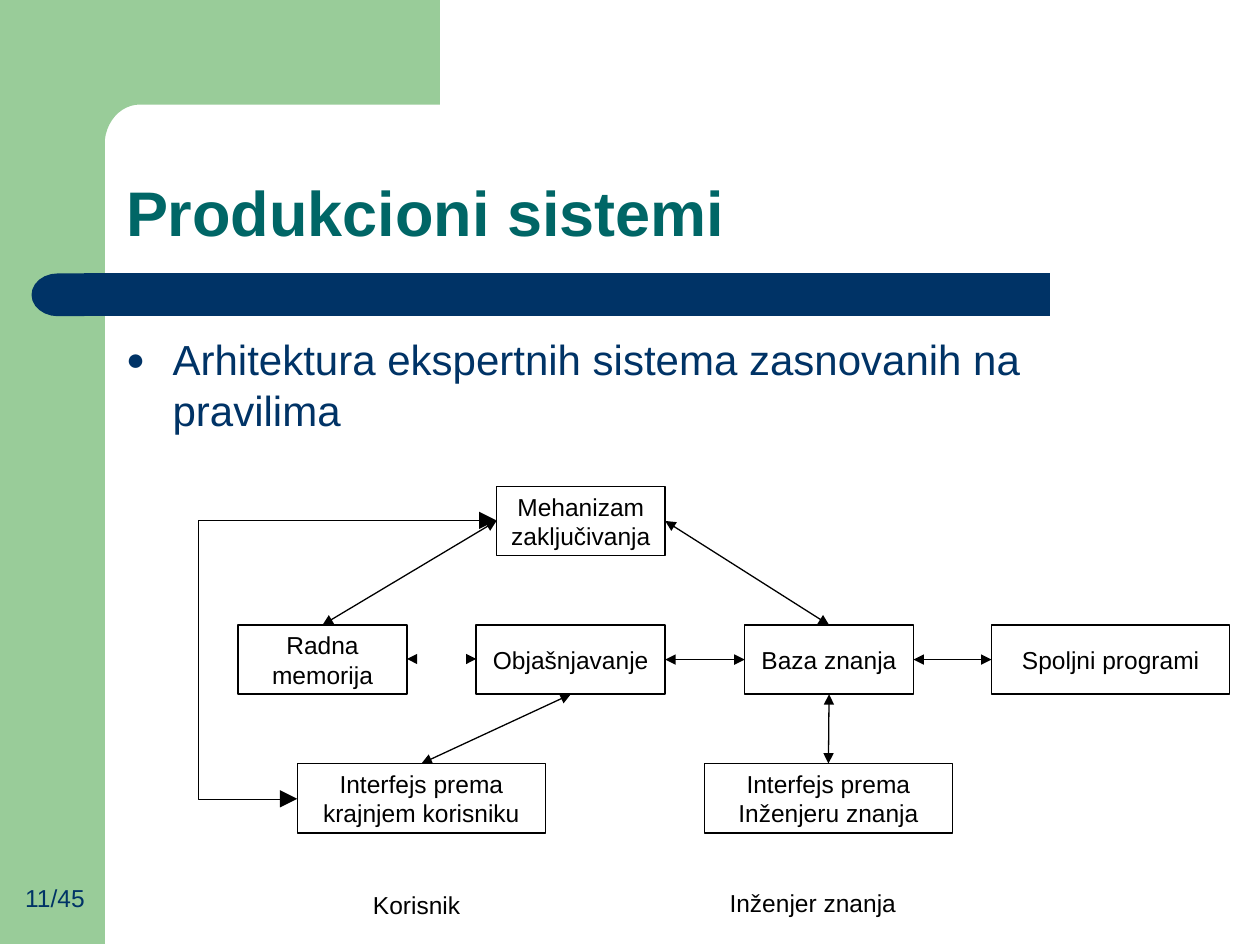
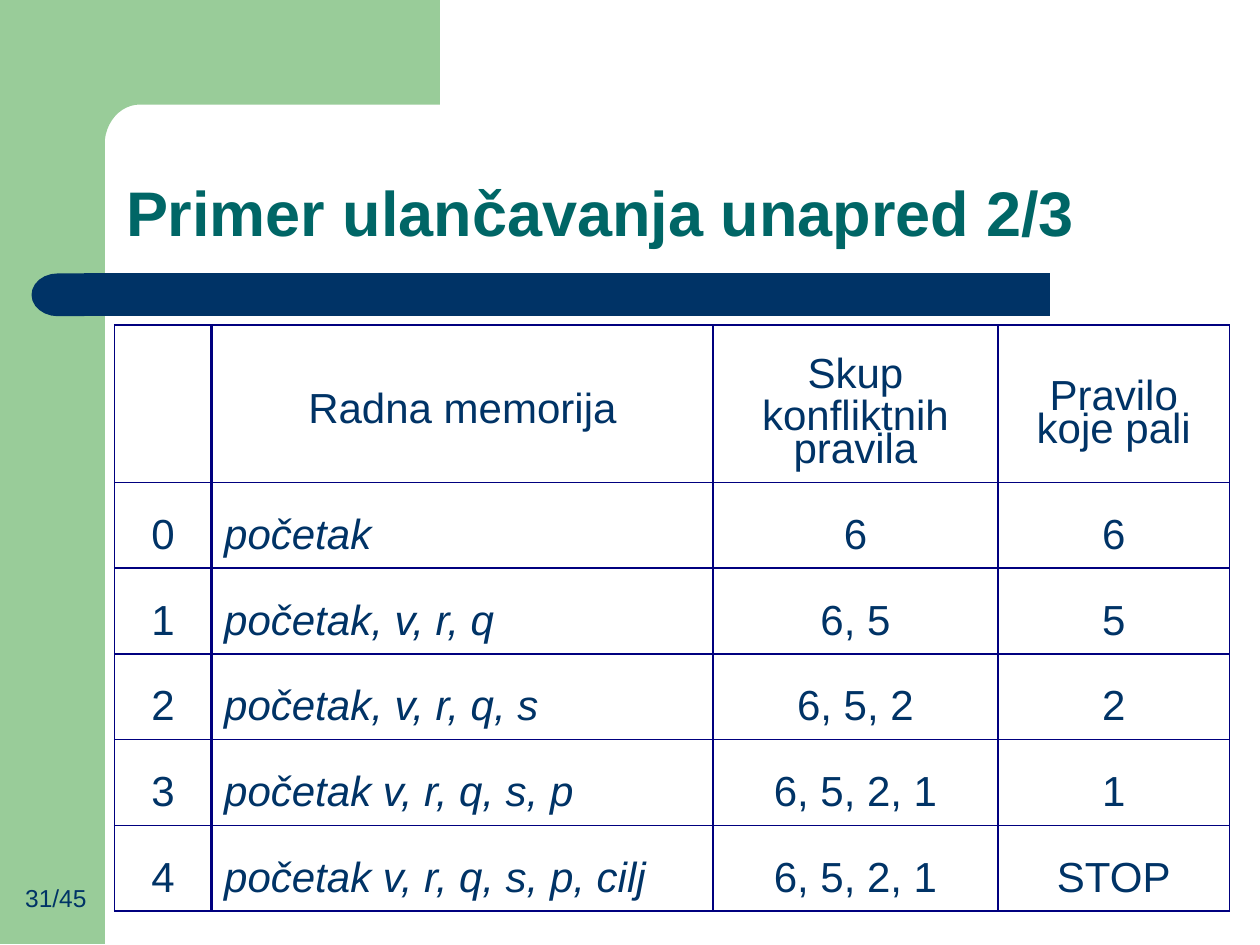
from math import cos, radians, sin

from lxml.etree import SubElement
from pptx import Presentation
from pptx.dml.color import RGBColor as Rgb
from pptx.enum.shapes import MSO_CONNECTOR as Connector, MSO_SHAPE as Shape
from pptx.enum.text import MSO_ANCHOR as Anchor, MSO_AUTO_SIZE as AutoSize, PP_ALIGN as Align
from pptx.oxml.ns import qn
from pptx.util import Inches, Pt

COLORS = {
    "green": "99CC99",
    "navy": "003366",
    "teal": "006666",
    "black": "000000",
    "border": "00007F",
}
TITLE_FONT = {"name": "Arial", "size": Pt(36), "bold": True}
BODY_FONT = {"name": "Arial", "size": Pt(24)}
SMALL_FONT = {"name": "Arial", "size": Pt(14)}
TOP, LEFT, BOTTOM, RIGHT = range(4)

BOX_HEIGHT = 0.55
DIAGRAM_BOXES = {
    "engine": ("Mehanizam\vzaključivanja", 3.94, 3.86, 1.34),
    "memory": ("Radna\vmemorija", 1.89, 4.96, 1.34),
    "explanation": ("Objašnjavanje", 3.78, 4.96, 1.5),
    "knowledge": ("Baza znanja", 5.91, 4.96, 1.34),
    "programs": ("Spoljni programi", 7.87, 4.96, 1.89),
    "user_interface": ("Interfejs prema\vkrajnjem korisniku", 2.36, 6.06, 1.97),
    "engineer_interface": ("Interfejs prema\vInženjeru znanja", 5.59, 6.06, 1.97),
}
DIAGRAM_LINKS = [
    ("memory", TOP, "engine", LEFT),
    ("knowledge", TOP, "engine", RIGHT),
    ("explanation", RIGHT, "knowledge", LEFT),
    ("knowledge", RIGHT, "programs", LEFT),
    ("user_interface", TOP, "explanation", BOTTOM),
    ("engineer_interface", TOP, "knowledge", BOTTOM),
]

COLUMN_WIDTHS = [0.77, 3.98, 2.26, 1.84]
HEADER_HEIGHT, ROW_HEIGHT = 1.25, 0.68
HEADERS = ["", "Radna memorija", "Skup\nkonfliktnih\vpravila", "Pravilo\vkoje pali"]
HEADER_MARGINS = [0, 0.48, 0.23, 0.47]
STEPS = [
    ("početak", "6", "6"),
    ("početak, v, r, q", "6, 5", "5"),
    ("početak, v, r, q, s", "6, 5, 2", "2"),
    ("početak v, r, q, s, p", "6, 5, 2, 1", "1"),
    ("početak v, r, q, s, p, cilj", "6, 5, 2, 1", "STOP"),
]


def set_values(target, values):
    for name, value in values.items():
        setattr(target, name, value)


def color_of(name):
    return Rgb.from_string(COLORS[name])


def write_text(frame, text, font, color, align=Align.LEFT, top=0.02, anchor=Anchor.TOP):
    set_values(frame, {
        "word_wrap": True, "auto_size": AutoSize.NONE, "vertical_anchor": anchor,
        "margin_left": 0, "margin_right": 0, "margin_top": Inches(top), "margin_bottom": 0,
    })
    frame.text = text
    for para in frame.paragraphs:
        set_values(para, {"alignment": align, "space_before": Pt(0), "line_spacing": 1.0})
        for span in para.runs:
            set_values(span.font, font)
            span.font.color.rgb = color_of(color)


def place(shape, left, top, width, height):
    set_values(shape, {
        "left": Inches(left), "top": Inches(top),
        "width": Inches(width), "height": Inches(height),
    })


def add_label(page, text, left, top, width, color="black", align=Align.LEFT):
    box = page.shapes.add_textbox(Inches(left), Inches(top), Inches(width), Inches(0.26))
    write_text(box.text_frame, text, SMALL_FONT, color, align)


def add_outline(page, points, close=True):
    start, *others = [(Inches(x), Inches(y)) for x, y in points]
    builder = page.shapes.build_freeform(*start)
    builder.add_line_segments(others, close=close)
    outline = builder.convert_to_shape()
    outline.shadow.inherit = False
    return outline


def add_polygon(page, points, color):
    polygon = add_outline(page, points)
    polygon.fill.solid()
    polygon.fill.fore_color.rgb = color_of(color)
    polygon.line.fill.background()


def arc(center_x, center_y, radius_x, radius_y, start, end, steps=12):
    angles = [radians(start + (end - start) * step / steps) for step in range(steps + 1)]
    return [(center_x + radius_x * cos(a), center_y + radius_y * sin(a)) for a in angles]


def rectangle(left, top, right, bottom):
    return [(left, top), (right, top), (right, bottom), (left, bottom)]


def add_frame(page, number):
    corner = [(3.49, 0), (0.5, 0), (0.5, 1.27), (0.83, 1.27)]
    corner += arc(1.11, 1.15, 0.28, 0.32, 180, 270) + [(3.49, 0.83)]
    cap = [(0.67, 2.17)] + arc(0.46, 2.34, 0.21, 0.17, 270, 90) + [(0.67, 2.51)]
    add_polygon(page, rectangle(0, 0, 0.83, 7.49), "green")
    add_polygon(page, corner, "green")
    add_polygon(page, rectangle(0.67, 2.17, 8.33, 2.51), "navy")
    add_polygon(page, cap, "navy")
    add_label(page, f"{number}/45", 0.2, 6.99, 0.53, "navy")


def add_page(deck, layout, title, title_width, number):
    page = deck.slides.add_slide(deck.slide_layouts[layout])
    place(page.shapes.title, 1, 1.34, title_width, 0.63)
    write_text(page.shapes.title.text_frame, title, TITLE_FONT, "teal", top=0.04)
    add_frame(page, number)
    return page


def fill_bullet(body, text):
    place(body, 1, 2.62, 7.12, 0.83)
    write_text(body.text_frame, text, BODY_FONT, "navy", top=0.03)
    properties = body.text_frame.paragraphs[0]._p.get_or_add_pPr()
    properties.set("marL", str(Inches(0.37)))
    properties.set("indent", str(-Inches(0.37)))
    SubElement(properties, qn("a:buSzPct"), val="75000")
    SubElement(properties, qn("a:buFont"), typeface="Arial")
    SubElement(properties, qn("a:buChar"), char="●")


def style_line(line, width, arrow_size=None):
    line.color.rgb = color_of("black")
    line.width = Pt(width)
    if arrow_size:
        for end in ("a:headEnd", "a:tailEnd"):
            SubElement(line._get_or_add_ln(), qn(end),
                       type="triangle", w=arrow_size, len=arrow_size)


def add_box(page, text, left, top, width):
    box = page.shapes.add_shape(
        Shape.RECTANGLE, Inches(left), Inches(top), Inches(width), Inches(BOX_HEIGHT))
    box.shadow.inherit = False
    box.fill.background()
    style_line(box.line, 0.84)
    write_text(box.text_frame, text, SMALL_FONT, "black", Align.CENTER, 0, Anchor.MIDDLE)
    return box


def add_link(page, source, source_side, target, target_side):
    link = page.shapes.add_connector(Connector.STRAIGHT, 0, 0, 0, 0)
    link.begin_connect(source, source_side)
    link.end_connect(target, target_side)
    style_line(link.line, 0.75, "med")
    SubElement(link._element.spPr, qn("a:effectLst"))


def add_arrow_tip(page, x, y, direction):
    back = x - direction * 0.08
    add_polygon(page, [(x, y), (back, y - 0.04), (back, y + 0.04)], "black")


def add_diagram(page):
    boxes = {name: add_box(page, *values) for name, values in DIAGRAM_BOXES.items()}
    for source, source_side, target, target_side in DIAGRAM_LINKS:
        add_link(page, boxes[source], source_side, boxes[target], target_side)
    add_arrow_tip(page, 3.23, 5.23, -1)
    add_arrow_tip(page, 3.78, 5.23, 1)
    loop = add_outline(page, [(2.36, 6.34), (1.57, 6.34), (1.57, 4.13), (3.94, 4.13)], False)
    loop.fill.background()
    style_line(loop.line, 0.25, "lg")
    add_label(page, "Korisnik", 2.96, 7.04, 0.75)
    add_label(page, "Inženjer znanja", 5.79, 7.03, 1.4)


def add_borders(cell, widths):
    properties = cell._tc.get_or_add_tcPr()
    for side, width in zip("LRTB", widths):
        line = SubElement(properties, qn(f"a:ln{side}"), w=str(Pt(width)))
        fill = SubElement(line, qn("a:solidFill"))
        SubElement(fill, qn("a:srgbClr"), val=COLORS["border"])


def fill_cell(cell, text, column, top):
    is_memory = column == 1 and top == 0.23
    font = {**BODY_FONT, "italic": is_memory}
    write_text(cell.text_frame, text, font, "navy", Align.LEFT if is_memory else Align.CENTER)
    set_values(cell, {
        "margin_left": Inches(0.1 if is_memory else 0), "margin_right": 0,
        "margin_top": Inches(top), "margin_bottom": 0,
    })


def add_steps_table(page):
    rows = [HEADERS] + [(str(step), *values) for step, values in enumerate(STEPS)]
    heights = [HEADER_HEIGHT] + [ROW_HEIGHT] * len(STEPS)
    table = page.shapes.add_table(
        len(rows), len(HEADERS), Inches(0.91), Inches(2.58),
        Inches(sum(COLUMN_WIDTHS)), Inches(sum(heights))).table
    set_values(table, {"first_row": False, "horz_banding": False})
    for column, width in zip(table.columns, COLUMN_WIDTHS):
        column.width = Inches(width)
    for r, (values, height) in enumerate(zip(rows, heights)):
        table.rows[r].height = Inches(height)
        for c, text in enumerate(values):
            cell = table.cell(r, c)
            fill_cell(cell, text, c, 0.23 if r else HEADER_MARGINS[c])
            add_borders(cell, [1.5 if c == 1 else 1, 1.5 if c == 0 else 1,
                               1, 1.5 if r == len(STEPS) else 1])
            cell.fill.background()
    first, second = table.cell(0, 2).text_frame.paragraphs
    first.line_spacing = Pt(24.6)
    set_values(second, {"line_spacing": 0.7, "space_before": Pt(4.3)})
    table.cell(0, 3).text_frame.paragraphs[0].line_spacing = 0.7


def main():
    deck = Presentation()
    set_values(deck, {"slide_width": Inches(10), "slide_height": Inches(7.5)})

    architecture = add_page(deck, 1, "Produkcioni sistemi", 4.85, 11)
    fill_bullet(architecture.placeholders[1],
                "Arhitektura ekspertnih sistema zasnovanih na pravilima")
    add_diagram(architecture)

    chaining = add_page(deck, 5, "Primer ulančavanja unapred 2/3", 7.65, 31)
    add_steps_table(chaining)

    deck.save("out.pptx")


if __name__ == "__main__":
    main()
